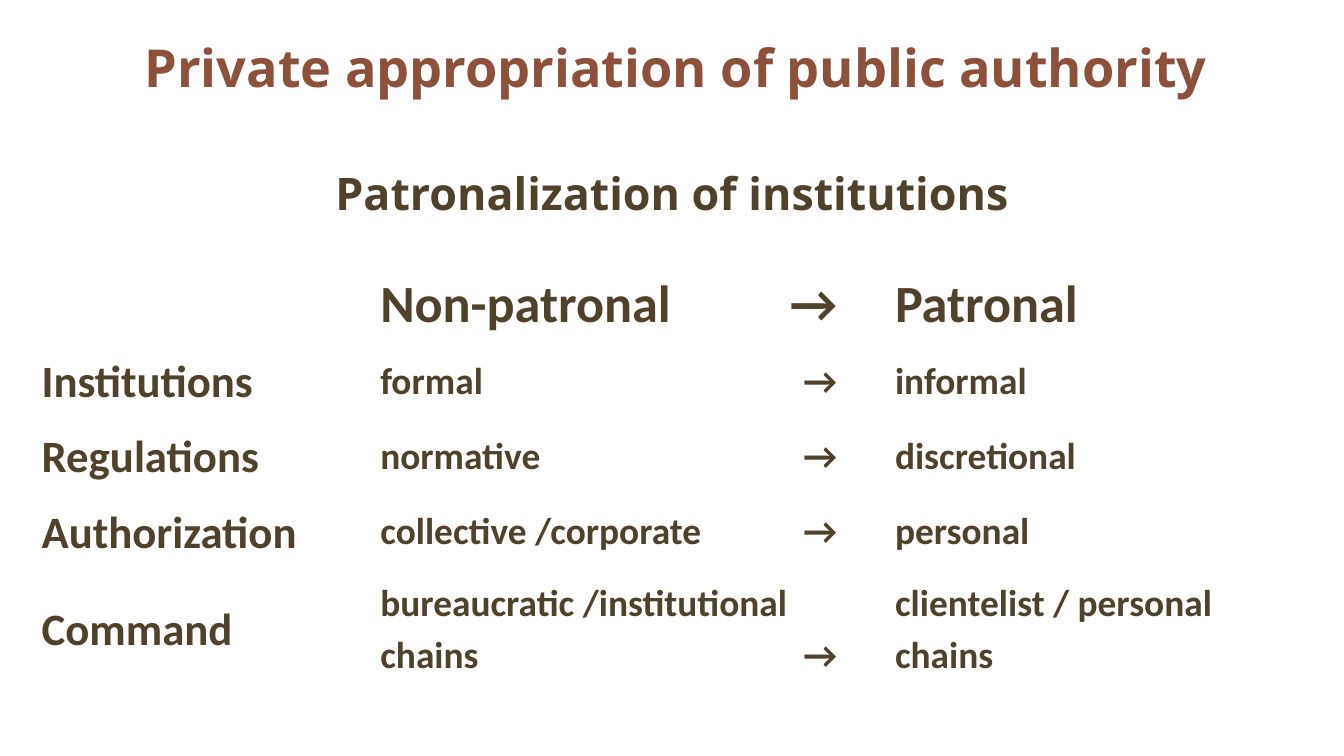
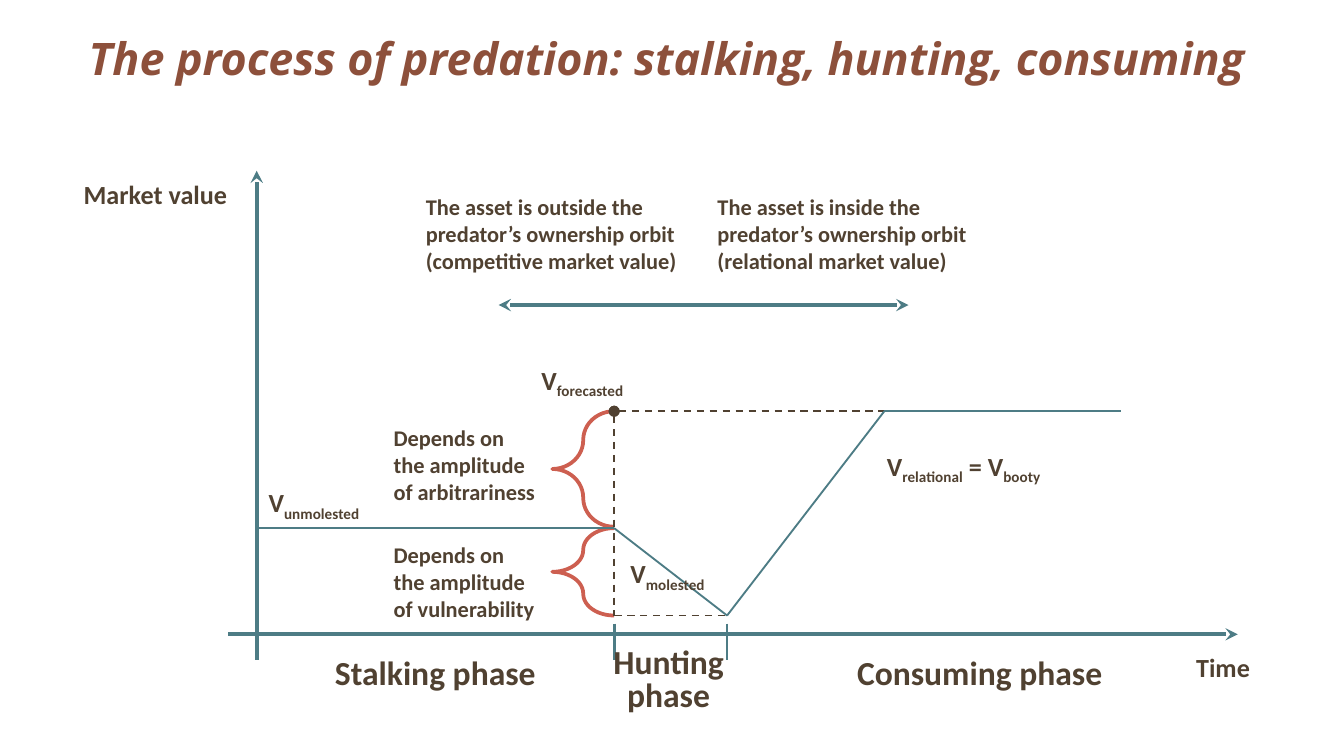
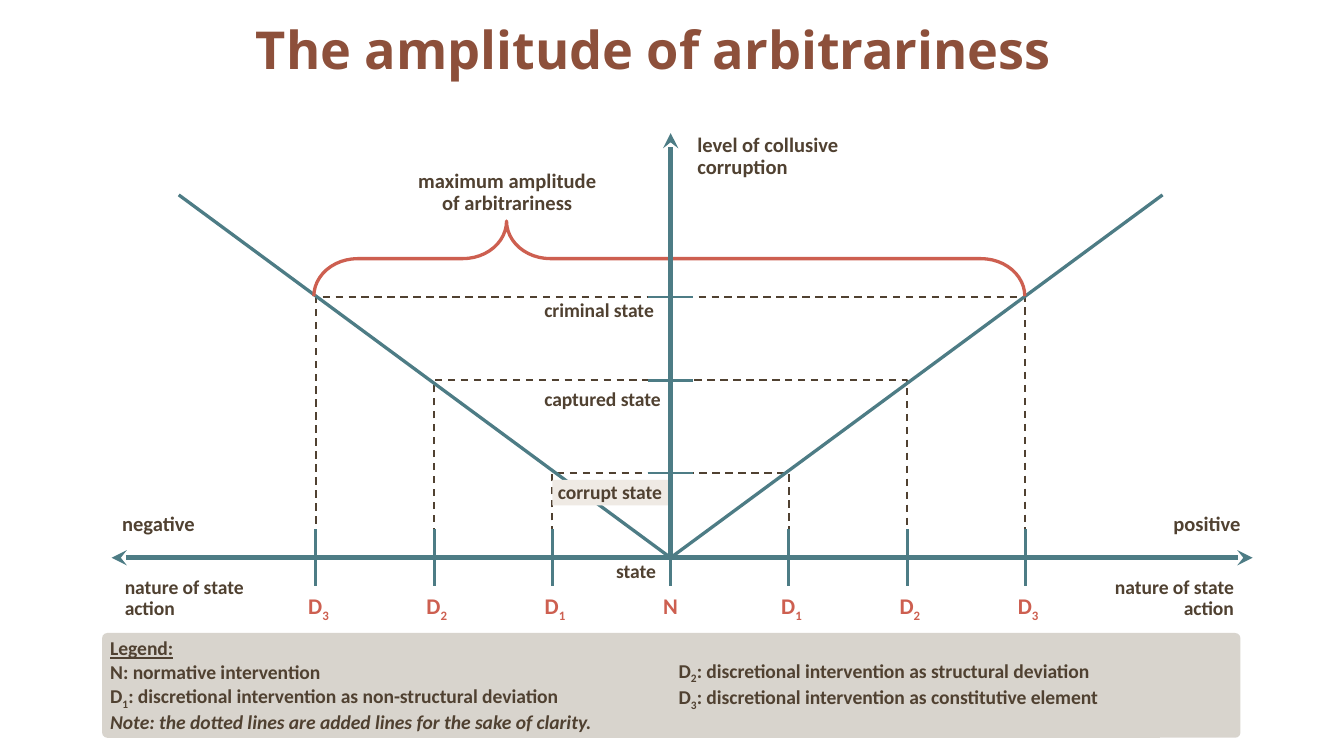
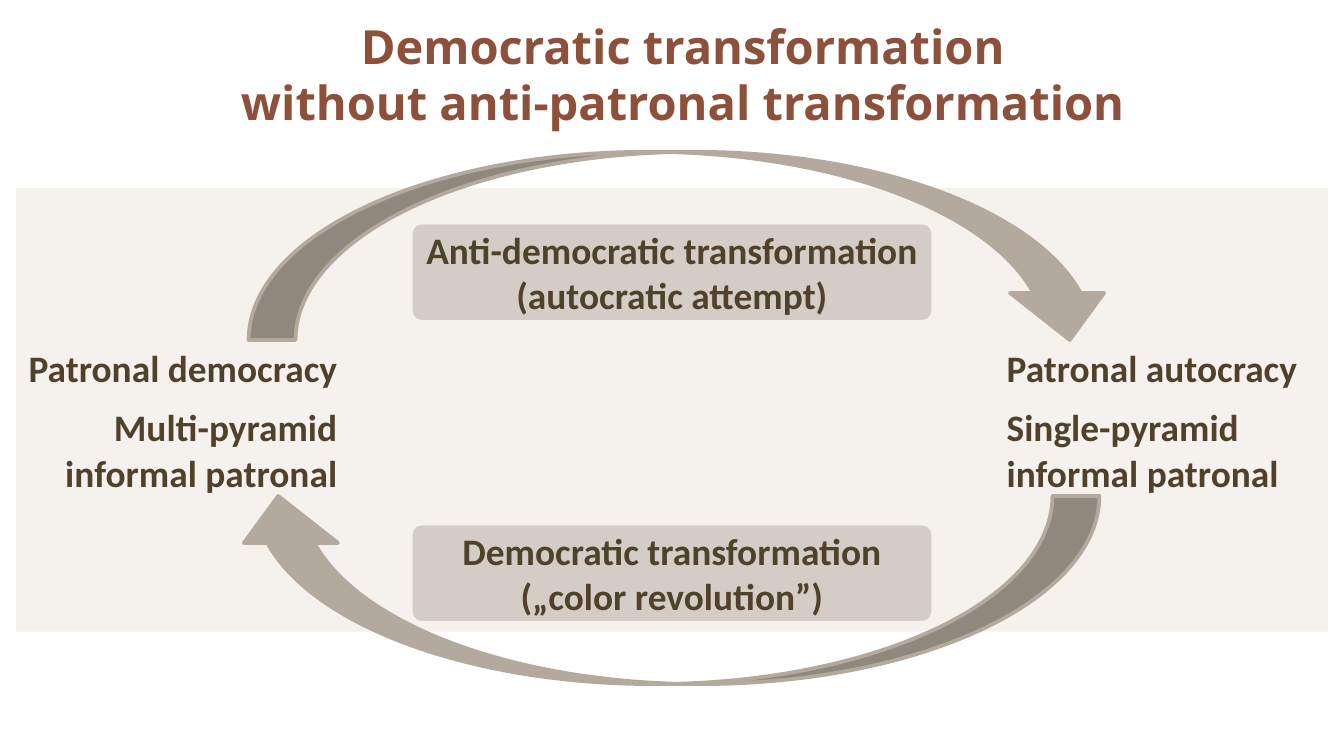
from lxml import etree
from pptx import Presentation
from pptx.dml.color import RGBColor
from pptx.enum import dml, shapes, text
from pptx.oxml import ns
from pptx.util import Inches, Pt

COLORS = {
    "title": "8D503B", "heading": "50412B", "ink": "504131", "axis": "4D7C85",
    "accent": "CD5F50", "taupe": "B3AA9D", "sand": "EFEAE4",
}
LEFT, CENTER, RIGHT = text.PP_ALIGN.LEFT, text.PP_ALIGN.CENTER, text.PP_ALIGN.RIGHT
TOP, MIDDLE, BOTTOM = text.MSO_ANCHOR.TOP, text.MSO_ANCHOR.MIDDLE, text.MSO_ANCHOR.BOTTOM
SHAPE = shapes.MSO_SHAPE
NORMAL_INSETS = (0.1, 0.05, 0.1, 0.05)
NO_GRID_STYLE = "{2D5ABB26-0587-4C30-8999-92F81FD0307C}"
SUBSCRIPT_MARK = "|"


def rgb(color):
    return RGBColor.from_string(COLORS[color])


def place(box):
    return [Inches(length) for length in box]


def add_xml(parent, tag, **attributes):
    return etree.SubElement(parent, ns.qn(tag), **attributes)


def paint(fill, color, alpha=None):
    if color is None:
        fill.background()
        return
    fill.solid()
    fill.fore_color.rgb = rgb(color)
    if alpha:
        solid = fill._xPr.find(ns.qn("a:solidFill"))
        add_xml(solid[0], "a:alpha", val=str(alpha * 1000))


def write_paragraph(paragraph, content, size, color="ink", font="Calibri", align=LEFT,
                    spacing=None, italic=False, underline=False, tab=None):
    if tab:
        stops = add_xml(paragraph._p.get_or_add_pPr(), "a:tabLst")
        add_xml(stops, "a:tab", pos=str(Inches(tab)), algn="r")
    paragraph.alignment = align
    if spacing:
        paragraph.line_spacing = spacing
    for row, line in enumerate(content.split("\n")):
        if row:
            paragraph.add_line_break()
        for index, part in enumerate(line.split(SUBSCRIPT_MARK)):
            if not part:
                continue
            run = paragraph.add_run()
            run.text = part
            run.font.name, run.font.size, run.font.bold = font, Pt(size), True
            run.font.color.rgb = rgb(color)
            if italic:
                run.font.italic = True
            if underline:
                run.font.underline = True
            if index % 2:
                run._r.get_or_add_rPr().set("baseline", "-25000")


def write(frame, paragraphs, size, **style):
    if isinstance(paragraphs, str):
        paragraphs = [paragraphs]
    for index, content in enumerate(paragraphs):
        paragraph = frame.add_paragraph() if index else frame.paragraphs[0]
        write_paragraph(paragraph, content, size, **style)


def set_insets(holder, insets):
    (holder.margin_left, holder.margin_top,
     holder.margin_right, holder.margin_bottom) = place(insets)


def set_frame(frame, anchor, insets):
    frame.word_wrap = True
    frame.auto_size = text.MSO_AUTO_SIZE.NONE
    frame.vertical_anchor = anchor
    set_insets(frame, insets)


def add_label(slide, box, content, size, anchor=TOP, insets=NORMAL_INSETS, **style):
    frame = slide.shapes.add_textbox(*place(box)).text_frame
    set_frame(frame, anchor, insets)
    write(frame, content, size, **style)


def add_title(slide, box, content, size, color="title", **style):
    title = slide.shapes.title
    title.left, title.top, title.width, title.height = place(box)
    set_frame(title.text_frame, MIDDLE, NORMAL_INSETS)
    write(title.text_frame, content, size, color=color, font="Open Sans", align=CENTER, **style)


def add_figure(slide, kind, box, fill=None, alpha=None, line=None, width=1, dashed=False,
               adjust=(), rotation=0):
    figure = slide.shapes.add_shape(kind, *place(box))
    figure.shadow.inherit = False
    figure.rotation = rotation
    for index, value in enumerate(adjust):
        figure.adjustments[index] = value
    paint(figure.fill, fill, alpha)
    paint(figure.line.fill, line)
    if line:
        figure.line.width = Pt(width)
    if dashed:
        figure.line.dash_style = dml.MSO_LINE.DASH
    return figure


def add_line(slide, start, end, width=1.5, color="axis", dashed=False, head=None, tail=None):
    line = slide.shapes.add_connector(shapes.MSO_CONNECTOR.STRAIGHT, *place(start + end))
    add_xml(line._element.spPr, "a:effectLst")
    line.line.color.rgb = rgb(color)
    line.line.width = Pt(width)
    if dashed:
        line.line.dash_style = dml.MSO_LINE.DASH
    outline = line.line._get_or_add_ln()
    for tag, ending in (("a:headEnd", head), ("a:tailEnd", tail)):
        if ending:
            add_xml(outline, tag, type=ending)


def add_grid(slide, box, columns, rows, insets, fill=None, alpha=None):
    frame = slide.shapes.add_table(len(rows), len(columns), *place(box))
    table = frame.table
    table.first_row = table.horz_banding = False
    table._tbl.tblPr.find(ns.qn("a:tableStyleId")).text = NO_GRID_STYLE
    for column, width in zip(table.columns, columns):
        column.width = Inches(width)
    for row, height in zip(table.rows, rows):
        row.height = Inches(height)
    for cell in table.iter_cells():
        set_insets(cell, insets)
        cell.vertical_anchor = MIDDLE
        paint(cell.fill, fill, alpha)
    return table


def build_patronalization(slide):
    contrasts = [
        ("", "Non-patronal\t→", "Patronal"),
        ("Institutions", "formal\t→", "informal"),
        ("Regulations", "normative\t→", "discretional"),
        ("Authorization", "collective /corporate\t→", "personal"),
        ("Command", ["bureaucratic /institutional", "chains\t→"], "clientelist / personal chains"),
    ]
    table = add_grid(slide, (0.24, 1.94, 9.53, 3.17), (2.52, 3.83, 3.18),
                     (0.59, 0.56, 0.56, 0.56, 0.89), (0.07, 0.01, 0.07, 0))
    for row, contrast in enumerate(contrasts):
        for column, content in enumerate(contrast):
            size = 28 if row == 0 else 20 if column else 24
            write(table.cell(row, column).text_frame, content, size, color="heading",
                  spacing=1.15 if row else 1.1, tab=3.4 if column == 1 else None)
    add_label(slide, (0.18, 0.21, 9.69, 0.87), "Private appropriation of public authority", 28,
              color="title", font="Open Sans", align=CENTER)
    add_title(slide, (0.12, 1.08, 9.76, 0.64), "Patronalization of institutions", 24,
              color="heading", spacing=1.15)


def build_predation(slide):
    add_title(slide, (0.08, -0.03, 9.76, 0.92),
              "The process of predation: stalking, hunting, consuming", 24, italic=True)

    origin, hunt_start, hunt_end, booty_start = 1.91, 4.57, 5.41, 6.58
    forecast, unmolested, molested, time_axis = 3.06, 3.93, 4.58, 4.72

    for top, height, bend, cause in ((forecast, 0.86, 0.465, "arbitrariness"),
                                     (unmolested, 0.65, 0.351, "vulnerability")):
        add_figure(slide, SHAPE.LEFT_BRACE, (4.11, top, 0.46, height), line="accent", width=2,
                   adjust=(bend, 0.5))
        add_label(slide, (2.83, top - 0.06, 1.28, 0.91), f"Depends on the amplitude of {cause}",
                  12, anchor=MIDDLE)

    for x in (hunt_start, hunt_end):
        add_line(slide, (x, 4.64), (x, 4.91))
    for start, end, marker in (
        ((hunt_start, molested), (hunt_end, molested), None),
        ((hunt_start, forecast), (booty_start, forecast), "oval"),
        ((hunt_start, forecast), (hunt_start, molested), "oval"),
    ):
        add_line(slide, start, end, 1, "ink", dashed=True, head=marker)

    value_course = [(origin, unmolested), (hunt_start, unmolested), (hunt_end, molested),
                    (booty_start, forecast), (8.34, forecast)]
    for index, (start, end) in enumerate(zip(value_course, value_course[1:])):
        add_line(slide, start, end, 1 if index else 1.25)

    add_line(slide, (origin, 1.27), (origin, 4.91), 2.25, head="stealth")
    add_line(slide, (9.21, time_axis), (1.7, time_axis), 2.25, head="stealth")
    for reach in (3.71, 6.76):
        add_line(slide, (5.24, 2.27), (reach, 2.27), 2.25, tail="stealth")

    for box, content in (
        ((1.9, 3.53, 0.95, 0.56), "V|unmolested|"),
        ((6.5, 3.26, 1.65, 0.56), "V|relational| = V|booty|"),
        ((3.93, 2.62, 1.99, 0.56), "V|forecasted|"),
    ):
        add_label(slide, box, content, 14, spacing=1.15)
    add_label(slide, (4.69, 4.11, 0.65, 0.28), "V|molested|", 14, insets=(0, 0, 0, 0),
              spacing=1.15)
    add_label(slide, (0.51, 1.24, 1.28, 0.37), "Market value", 14, anchor=MIDDLE, align=RIGHT,
              spacing=1.15)
    for box, content, size, spacing in (
        ((8.79, 4.76, 0.62, 0.47), "Time", 14, 1.15),
        ((2.37, 4.76, 1.74, 0.47), "Stalking phase", 18, 1.15),
        ((4.44, 4.78, 1.07, 0.59), "Hunting phase", 18, 0.8),
        ((6.24, 4.76, 2.1, 0.45), "Consuming phase", 18, 1.15),
    ):
        add_label(slide, box, content, size, align=CENTER, spacing=spacing)
    for left, width, side, value in ((3.07, 2.17, "outside", "competitive"),
                                     (5.24, 2.24, "inside", "relational")):
        add_label(slide, (left, 1.35, width, 0.78),
                  f"The asset is {side} the predator’s ownership orbit ({value} market value)",
                  12, anchor=MIDDLE)


def add_legend(slide):
    table = add_grid(slide, (0.77, 4.7, 8.46, 0.78), (4.23, 4.23), (0.78,),
                     (0.05, 0.04, 0.05, 0.04))
    basics = table.cell(0, 0).text_frame
    write_paragraph(basics.paragraphs[0], "Legend:", 10.5, underline=True)
    for entry in ("N: normative intervention",
                  "D|1|: discretional intervention as non-structural deviation"):
        write_paragraph(basics.add_paragraph(), entry, 10.5)
    write_paragraph(basics.add_paragraph(),
                    "Note: the dotted lines are added lines for the sake of clarity.", 10.5,
                    italic=True)
    write(table.cell(0, 1).text_frame,
          ["D|2|: discretional intervention as structural deviation",
           "D|3|: discretional intervention as constitutive element"], 10.5)


def build_arbitrariness(slide):
    add_figure(slide, SHAPE.ROUNDED_RECTANGLE, (0.76, 4.71, 8.47, 0.78), "taupe", 50,
               adjust=(0.05,))
    add_title(slide, (-0.02, 0, 9.76, 0.73), "The amplitude of arbitrariness", 28)

    center, base, step = 4.99, 4.15, 0.88
    level_tops = {1: 3.52, 2: 2.83, 3: 2.21}

    for level, top in level_tops.items():
        reach = level * step
        add_figure(slide, SHAPE.RECTANGLE, (center - reach, top, 2 * reach, base - top),
                   line="ink", dashed=True)
        add_line(slide, (center - 0.17, top), (center + 0.17, top))
    for position in range(-3, 4):
        x = center + position * step
        add_line(slide, (x, 3.94), (x, 4.36))
        nudge = 0.02 if position else 0
        add_label(slide, (x + nudge - 0.38, 4.36, 0.76, 0.36),
                  f"D|{abs(position)}|" if position else "N", 12, color="accent", align=CENTER)
    for side in (-1, 1):
        add_line(slide, (center, base), (center + side * 3.66, 1.45), 1.75)

    tight = (0.04, 0, 0.04, 0)
    add_label(slide, (4.01, 2.88, 0.97, 0.27), "captured state", 10.5, insets=tight)
    add_label(slide, (4.01, 2.22, 1.03, 0.17), "criminal state", 10.5, insets=tight)
    corrupt = add_figure(slide, SHAPE.RECTANGLE, (4.11, 3.57, 0.88, 0.19), "sand")
    set_frame(corrupt.text_frame, TOP, tight)
    write(corrupt.text_frame, "corrupt state", 10.5)

    for box, content, size, align, spacing in (
        ((4.45, 4.11, 0.53, 0.31), "state", 10.5, RIGHT, None),
        ((5.09, 0.95, 1.34, 0.46), "level of collusive corruption", 11, LEFT, 0.9),
        ((2.95, 1.22, 1.65, 0.43), "maximum amplitude of arbitrariness", 11, CENTER, 0.9),
        ((8.15, 4.25, 1.13, 0.45), "nature of state action", 10.5, RIGHT, 0.9),
        ((0.83, 4.25, 1.22, 0.45), "nature of state action", 10.5, LEFT, 0.9),
        ((8.51, 3.75, 0.82, 0.37), "positive", 11, RIGHT, None),
        ((0.81, 3.75, 0.87, 0.35), "negative", 11, LEFT, None),
    ):
        add_label(slide, box, content, size, align=align, spacing=spacing)

    add_figure(slide, SHAPE.LEFT_BRACE, (4.7, -0.72, 0.56, 5.29), line="accent", width=1.75,
               adjust=(0.583, 0.729), rotation=90)
    add_line(slide, (0.83, base), (9.32, base), 2.75, head="stealth", tail="stealth")
    add_line(slide, (center, base), (center, 0.99), 2.75, tail="stealth")
    add_legend(slide)


def build_transformation(slide):
    add_title(slide, (0.14, 0.13, 9.88, 0.84),
              "Democratic transformation\nwithout anti-patronal transformation", 25.2)
    table = add_grid(slide, (0.12, 1.4, 9.76, 3.3), (2.44, 4.88, 2.44), (1.57, 1.73),
                     (0.05, 0.05, 0.05, 0.05), "sand", 60)
    table.cell(0, 1).merge(table.cell(1, 1))
    for column, align, regime, pyramid in ((0, RIGHT, "Patronal democracy", "Multi-pyramid"),
                                           (2, LEFT, "Patronal autocracy", "Single-pyramid")):
        for row, anchor, content in ((0, BOTTOM, regime),
                                     (1, TOP, [pyramid, "informal patronal"])):
            cell = table.cell(row, column)
            cell.vertical_anchor = anchor
            write(cell.text_frame, content, 20, color="heading", align=align)

    for arrow_left, arrow_top, rotation, box_top, content in (
        (1.72, 3.69, 180, 3.91, "Democratic transformation\n(„color revolution”)"),
        (1.85, 1.13, 0, 1.67, "Anti-democratic transformation\n(autocratic attempt)"),
    ):
        add_figure(slide, SHAPE.CURVED_DOWN_ARROW, (arrow_left, arrow_top, 6.46, 1.4), "taupe",
                   line="taupe", width=2, rotation=rotation)
        process = add_figure(slide, SHAPE.ROUNDED_RECTANGLE, (3.07, box_top, 3.86, 0.71),
                             "taupe", 50, adjust=(0.097,))
        set_frame(process.text_frame, MIDDLE, (0, 0, 0, 0))
        write(process.text_frame, content, 20, color="heading", align=CENTER)


def main():
    deck = Presentation()
    deck.slide_width = Inches(10)
    deck.slide_height = deck.slide_width * 9 // 16
    title_only = deck.slide_layouts[5]
    for build in (build_patronalization, build_predation, build_arbitrariness,
                  build_transformation):
        build(deck.slides.add_slide(title_only))
    deck.save("out.pptx")


if __name__ == "__main__":
    main()
